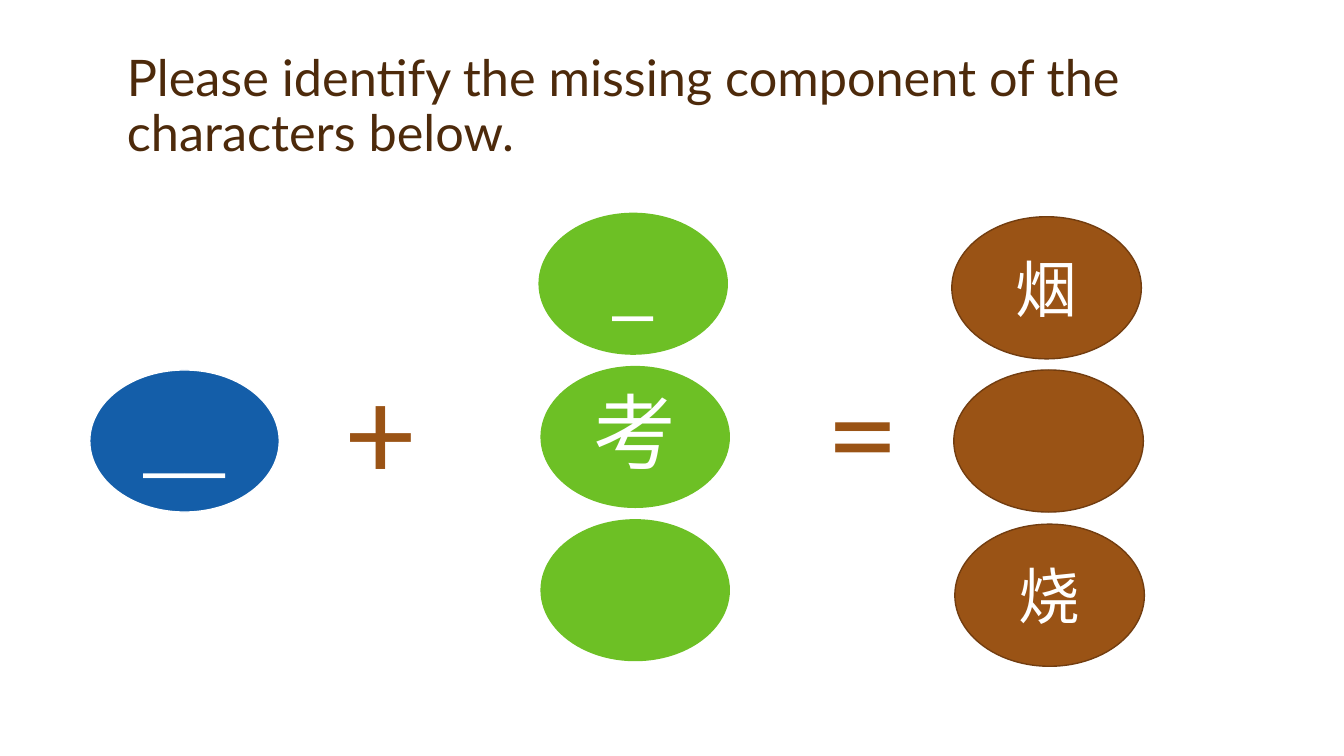
from pptx import Presentation
from pptx.dml.color import RGBColor
from pptx.enum.shapes import MSO_SHAPE
from pptx.enum.text import MSO_ANCHOR, PP_ALIGN
from pptx.util import Inches, Pt

WHITE = RGBColor(0xFF, 0xFF, 0xFF)
BLUE = RGBColor(0x14, 0x5E, 0xA9)
GREEN = RGBColor(0x6D, 0xC0, 0x25)
BROWN = RGBColor(0x9A, 0x53, 0x15)
DARK_BROWN = RGBColor(0x72, 0x3D, 0x10)
TITLE_BROWN = RGBColor(0x4D, 0x2A, 0x0B)


def write(frame, text, size, color, font="Calibri", align=PP_ALIGN.CENTER,
          anchor=MSO_ANCHOR.MIDDLE, spacing=1.0):
    frame.word_wrap = True
    frame.vertical_anchor = anchor
    para = frame.paragraphs[0]
    para.text = text
    para.alignment = align
    para.line_spacing = spacing
    para.font.name = font
    para.font.size = Pt(size)
    para.font.color.rgb = color


deck = Presentation()
deck.slide_width = Inches(13.33)
deck.slide_height = Inches(7.5)
page = deck.slides.add_slide(deck.slide_layouts[6])

title = page.shapes.add_textbox(Inches(1.16), Inches(0.33), Inches(11), Inches(1.33))
write(title.text_frame, "Please identify the missing component of the characters below.",
      36, TITLE_BROWN, "Lato", PP_ALIGN.LEFT, MSO_ANCHOR.BOTTOM, 0.9)

# left, top, fill, outline, text, text size, line spacing
ovals = [
    (0.89, 3.67, BLUE, WHITE, "__", 59, 0.9),
    (5.34, 2.11, GREEN, None, "_", 59, 0.9),
    (5.36, 3.63, GREEN, None, "考", 59, 0.9),
    (5.36, 5.15, GREEN, None, "", 59, 0.9),
    (9.44, 2.15, BROWN, DARK_BROWN, "烟", 44, 1.0),
    (9.46, 3.67, BROWN, DARK_BROWN, "", 44, 1.0),
    (9.47, 5.20, BROWN, DARK_BROWN, "烧", 44, 1.0),
]
for left, top, fill, outline, text, size, spacing in ovals:
    oval = page.shapes.add_shape(MSO_SHAPE.OVAL, Inches(left), Inches(top),
                                 Inches(1.88), Inches(1.41))
    oval.shadow.inherit = False
    oval.fill.solid()
    oval.fill.fore_color.rgb = fill
    if outline is None:
        oval.line.fill.background()
    else:
        oval.line.color.rgb = outline
        oval.line.width = Pt(1)
    if text:
        frame = oval.text_frame
        frame.margin_left = frame.margin_right = Inches(0.04)
        frame.margin_top = frame.margin_bottom = Inches(0.04)
        write(frame, text, size, WHITE, spacing=spacing)

for sign, left, width in [("+", 2.77, 2.01), ("=", 7.67, 1.77)]:
    box = page.shapes.add_textbox(Inches(left), Inches(3.37), Inches(width), Inches(1.72))
    write(box.text_frame, sign, 96, BROWN)

deck.save("out.pptx")
